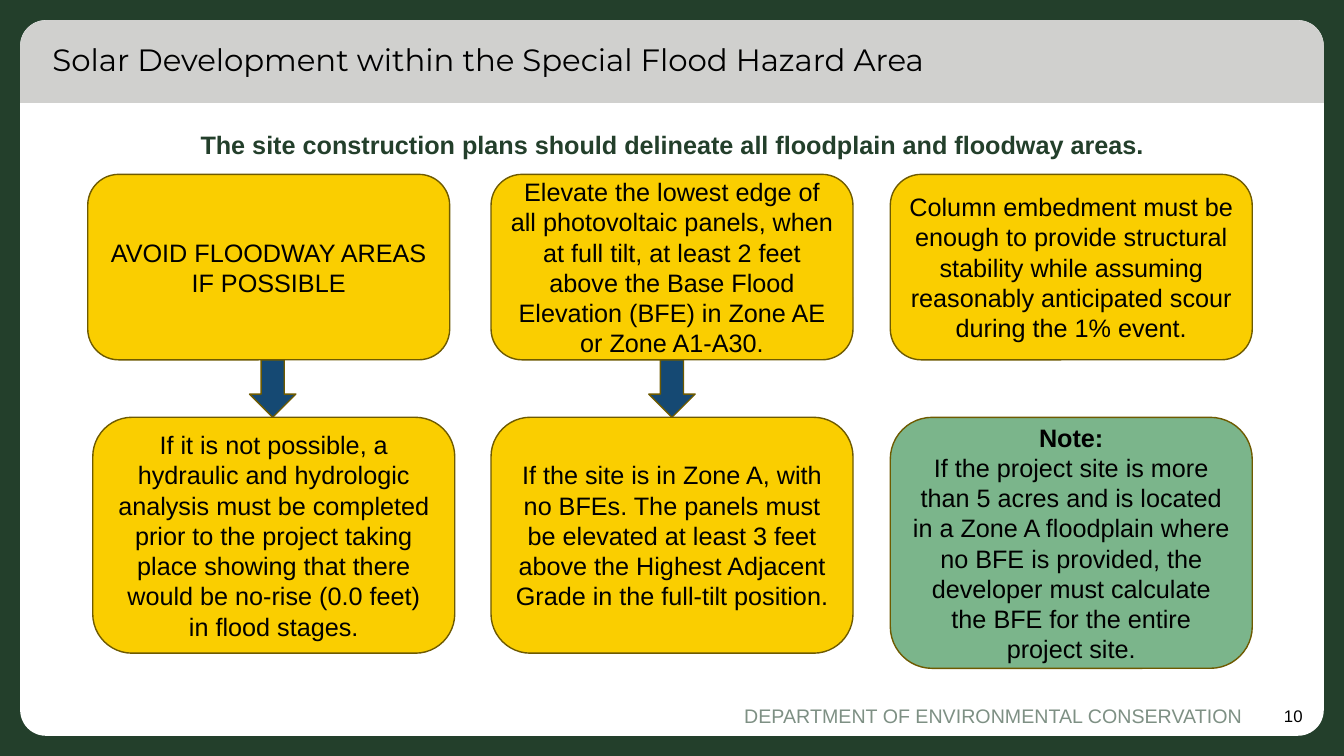
"""Build the slide on solar development within the Special Flood Hazard Area."""
from pptx import Presentation, util as u
from pptx.dml.color import RGBColor
from pptx.enum import shapes, text

WIDTH, HEIGHT, MARGIN = 13.33, 7.5, 0.2
HEADER = 0.82
CARD_LEFT, CARD_WIDTH, COLUMN_STEP = 0.91, 3.59, 3.96
ROW_TOPS = (1.73, 4.14)
TOP_HEIGHT, ARROW_WIDTH = 1.84, 0.46
GREEN, YELLOW, SAGE, BLUE, OLIVE = "233F2B", "FACE00", "7BB58B", "154973", "6E5A00"
SHAPE, ALIGN = shapes.MSO_SHAPE, text.PP_ALIGN


def add_shape(kind, area, fill, line=None):
    box = page.shapes.add_shape(kind, *map(u.Inches, area))
    box.shadow.inherit = False
    box.fill.solid()
    box.fill.fore_color.rgb = RGBColor.from_string(fill)
    if line:
        box.line.color.rgb = RGBColor.from_string(line)
        box.line.width = u.Pt(1)
    else:
        box.line.fill.background()
    return box


def write(box, lines, align=ALIGN.CENTER, anchor=text.MSO_ANCHOR.MIDDLE,
          size=18, color="000000", name="Arial", bold=False):
    frame = box.text_frame
    frame.word_wrap = True
    frame.vertical_anchor = anchor
    for number, line in enumerate(lines):
        para = frame.add_paragraph() if number else frame.paragraphs[0]
        para.alignment = align
        span = para.add_run()
        span.text = line
        span.font.color.rgb = RGBColor.from_string(color)
        formats = {"name": name, "size": u.Pt(size), "bold": bold or line == "Note:"}
        for key, value in formats.items():
            setattr(span.font, key, value)


deck = Presentation()
deck.slide_width, deck.slide_height = u.Inches(WIDTH), u.Inches(HEIGHT)
page = deck.slides.add_slide(deck.slide_layouts[5])

inner_width, inner_height = WIDTH - 2 * MARGIN, HEIGHT - 2 * MARGIN
add_shape(SHAPE.RECTANGLE, (0, 0, WIDTH, HEIGHT), GREEN)
panel = add_shape(SHAPE.ROUNDED_RECTANGLE, (MARGIN, MARGIN, inner_width, inner_height), "FFFFFF")
panel.adjustments[0] = 0.036
band = add_shape(SHAPE.ROUND_2_SAME_RECTANGLE, (MARGIN, MARGIN, inner_width, HEADER), "D0D0CE")
band.adjustments[0] = 0.315

title = page.shapes.title
page.shapes.element.append(title.element)
for side, value in zip(("left", "top", "width", "height"), (0.42, MARGIN, 12.5, HEADER)):
    setattr(title, side, u.Inches(value))
write(title, ["Solar Development within the Special Flood Hazard Area"],
      align=ALIGN.LEFT, size=22, name="Montserrat")
title.text_frame.paragraphs[0].line_spacing = 0.9

labels = [
    ((0.8, 1.23, 11.74, 0.4),
     "The site construction plans should delineate all floodplain and floodway areas.",
     {"color": GREEN, "bold": True, "anchor": text.MSO_ANCHOR.TOP}),
    ((0.42, 6.9, 12, 0.4), "DEPARTMENT OF ENVIRONMENTAL CONSERVATION",
     {"align": ALIGN.RIGHT, "size": 14, "color": "7E9084"}),
    ((12.42, 6.9, 0.5, 0.4), "10", {"align": ALIGN.RIGHT, "size": 12}),
]
for area, line, formats in labels:
    box = page.shapes.add_textbox(*map(u.Inches, area))
    write(box, [line], **formats)
box.text_frame.margin_right = 0

cards = [
    (0, 0, -0.04, TOP_HEIGHT, YELLOW, ["AVOID FLOODWAY AREAS IF POSSIBLE"]),
    (0, 1, 0.01, 2.34, YELLOW,
     ["If it is not possible, a hydraulic and hydrologic analysis must be completed prior to "
      "the project taking place showing that there would be no-rise (0.0 feet) in flood stages."]),
    (1, 0, 0, TOP_HEIGHT, YELLOW,
     ["Elevate the lowest edge of all photovoltaic panels, when at full tilt, at least 2 feet "
      "above the Base Flood Elevation (BFE) in Zone AE or Zone A1-A30."]),
    (1, 1, 0, 2.34, YELLOW,
     ["If the site is in Zone A, with no BFEs. The panels must be elevated at least 3 feet "
      "above the Highest Adjacent Grade in the full-tilt position."]),
    (2, 0, 0, TOP_HEIGHT, YELLOW,
     ["Column embedment must be enough to provide structural stability while assuming "
      "reasonably anticipated scour during the 1% event."]),
    (2, 1, 0, 2.49, SAGE,
     ["Note:",
      "If the project site is more than 5 acres and is located in a Zone A floodplain where no "
      "BFE is provided, the developer must calculate the BFE for the entire project site."]),
]
for column, row, shift, height, fill, lines in cards:
    left = CARD_LEFT + column * COLUMN_STEP + shift
    card = add_shape(SHAPE.ROUNDED_RECTANGLE, (left, ROW_TOPS[row], CARD_WIDTH, height), fill, OLIVE)
    write(card, lines)

arrow_top = ROW_TOPS[0] + TOP_HEIGHT
for column in range(2):
    left = CARD_LEFT + column * COLUMN_STEP + (CARD_WIDTH - ARROW_WIDTH) / 2
    add_shape(SHAPE.DOWN_ARROW, (left, arrow_top, ARROW_WIDTH, ROW_TOPS[1] - arrow_top), BLUE, OLIVE)

deck.save("out.pptx")
